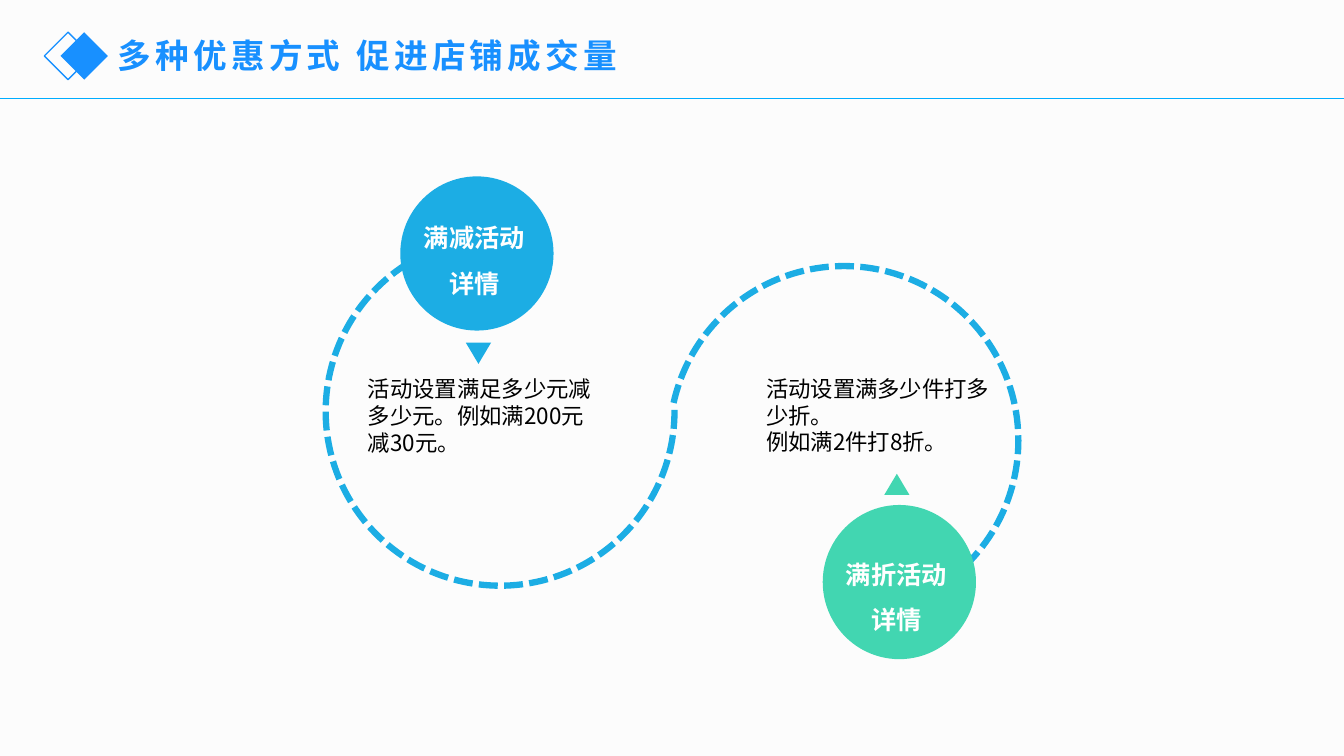
"""Build the slide on two shop promotions joined by a dashed S curve."""
import pptx
import pptx.util
import pptx.dml.color
import pptx.enum.dml
import pptx.enum.shapes
import pptx.enum.text
import pptx.oxml
import pptx.oxml.ns
from lxml import etree

Inches = pptx.util.Inches
SHAPE = pptx.enum.shapes.MSO_SHAPE
ALIGN = pptx.enum.text.PP_ALIGN

FONT = "Noto Sans CJK SC"
ACCENT, BLUE, GREEN = "1890FF", "1CADE4", "42D6B1"
TITLE = "多种优惠方式 促进店铺成交量"
DIAMONDS = [(0.44, None, ACCENT), (0.6, ACCENT, None)]
ARCS = [((6.64, 2.64), 78.8), ((3.23, 2.35), 245.9)]
PROMOTIONS = [
    {"color": BLUE, "circle": (3.97, 1.75), "name": "满减活动详情",
     "name_box": (4.1, 2.01, 1.21, 0.94), "pointer": (4.62, 3.4), "turn": 180,
     "detail": "活动设置满足多少元减多少元。例如满200元减30元。",
     "detail_box": (3.55, 3.67, 2.55, 0.91)},
    {"color": GREEN, "circle": (8.16, 5.01), "name": "满折活动详情",
     "name_box": (8.22, 5.35, 1.34, 0.94), "pointer": (8.77, 4.7), "turn": 0,
     "detail": "活动设置满多少件打多少折。\n例如满2件打8折。",
     "detail_box": (7.5, 3.67, 2.56, 0.94)},
]


def rgb(color):
    return pptx.dml.color.RGBColor.from_string(color)


def paint(fill, color):
    if color:
        fill.solid()
        fill.fore_color.rgb = rgb(color)
    else:
        fill.background()


def add_shape(s, kind, box, fill=None, line=None, width=1, turn=0):
    sp = s.shapes.add_shape(kind, *map(Inches, box))
    sp.shadow.inherit = False
    paint(sp.fill, fill)
    paint(sp.line.fill, line)
    if line:
        sp.line.width = pptx.util.Pt(width)
    sp.rotation = turn
    return sp


def write(sp, text, size, color, bold=False, align=ALIGN.LEFT, spacing=None, tracking=0):
    tf = sp.text_frame
    tf.word_wrap = True
    tf.auto_size = pptx.enum.text.MSO_AUTO_SIZE.NONE
    tf.text = text
    for p in tf.paragraphs:
        p.alignment = align
        p.line_spacing = spacing
        for r in p.runs:
            r.font.size = pptx.util.Pt(size)
            r.font.bold = bold
            r.font.color.rgb = rgb(color)
            r.font.name = FONT
            props = r.font._element if hasattr(r.font, "_element") else r._r.get_or_add_rPr()
            etree.SubElement(props, pptx.oxml.ns.qn("a:ea"), typeface=FONT)
            if tracking:
                props.set("spc", str(tracking * 100))


def add_text(s, box, *args, **style):
    write(s.shapes.add_textbox(*map(Inches, box)), *args, **style)


def add_header(s):
    rule = s.shapes.add_connector(pptx.enum.shapes.MSO_CONNECTOR.STRAIGHT,
                                  *map(Inches, (-0.09, 0.98, 13.41, 0.98)))
    rule.line.color.rgb = rgb("00ADFF")
    rule.line.width = pptx.util.Pt(1)
    etree.SubElement(rule._element.spPr, pptx.oxml.ns.qn("a:effectLst"))
    for left, fill, line in DIAMONDS:
        add_shape(s, SHAPE.DIAMOND, (left, 0.32, 0.47, 0.47), fill, line)
    title = s.shapes.title
    title.left, title.top, title.width, title.height = map(Inches, (1.07, 0.3, 5.49, 0.5))
    write(title, TITLE, 24, ACCENT, bold=True, tracking=3)


def add_curve(s):
    for place, turn in ARCS:
        arc = add_shape(s, SHAPE.ARC, (*place, 3.46, 3.46), line=BLUE, width=4.5, turn=turn)
        arc.adjustments[0] = 68.18
        arc.adjustments[1] = 0
        arc.line.dash_style = pptx.enum.dml.MSO_LINE.SQUARE_DOT


def add_promotion(s, promo):
    add_shape(s, SHAPE.OVAL, (*promo["circle"], 1.52, 1.53), promo["color"])
    add_text(s, promo["name_box"], promo["name"], 18, "FFFFFF",
             bold=True, align=ALIGN.CENTER, spacing=1.5)
    add_text(s, promo["detail_box"], promo["detail"], 16, "000000")
    add_shape(s, SHAPE.ISOSCELES_TRIANGLE, (*promo["pointer"], 0.25, 0.21),
              promo["color"], turn=promo["turn"])


def main():
    prs = pptx.Presentation()
    prs.slide_width, prs.slide_height = Inches(13.33), Inches(7.5)
    s = prs.slides.add_slide(prs.slide_layouts[5])
    paint(s.background.fill, "FCFCFC")
    add_header(s)
    add_curve(s)
    for promo in PROMOTIONS:
        add_promotion(s, promo)
    prs.save("out.pptx")


if __name__ == "__main__":
    main()
